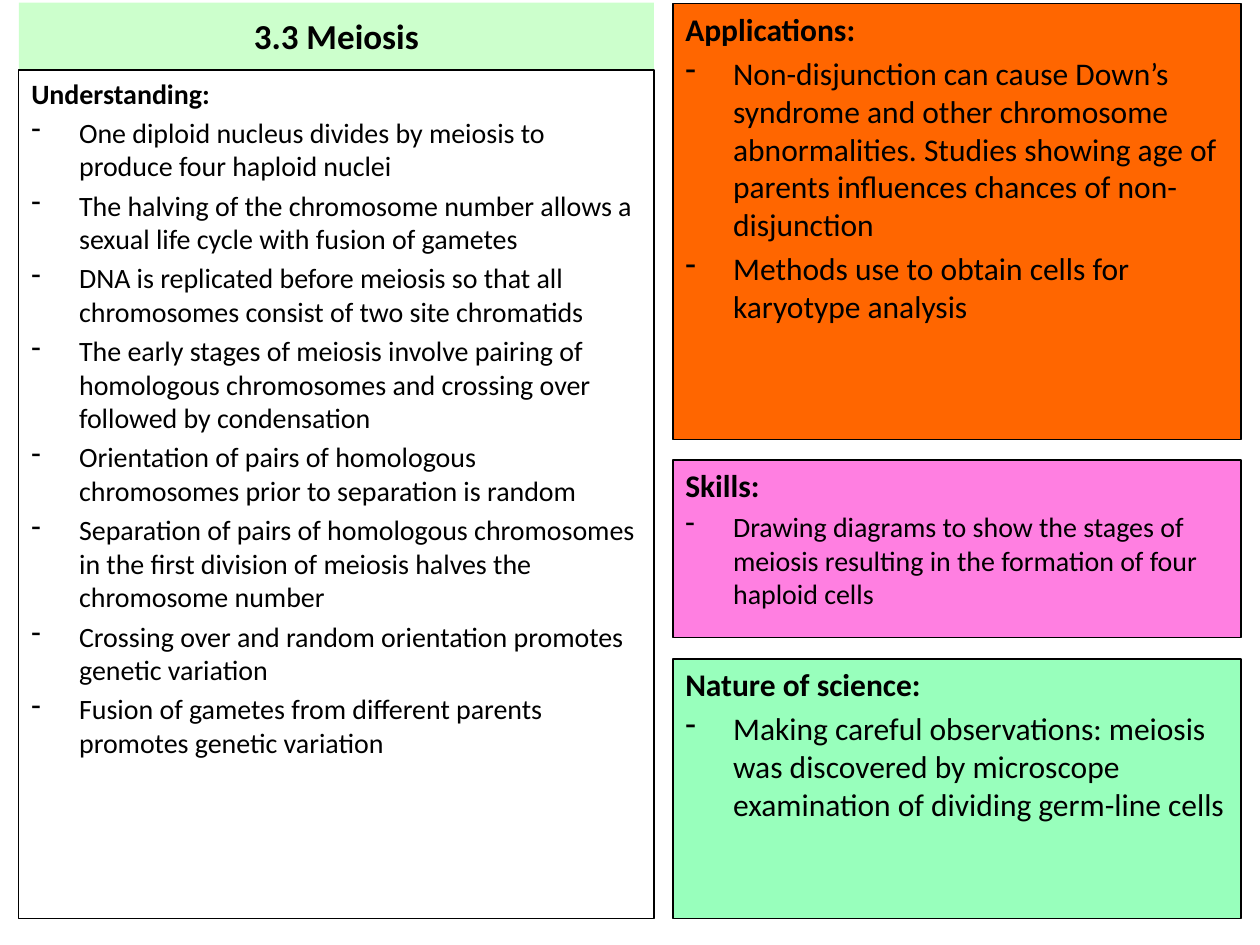
import pptx
import pptx.dml.color
import pptx.enum.shapes
import pptx.enum.text
import pptx.oxml
import pptx.util
from pptx.oxml.ns import qn

COLOURS = {
    "text": "000000",
    "line": "000000",
    "title": "CCFFCC",
    "applications": "FF6600",
    "skills": "FF7FE1",
    "nature": "98FFBC",
}

# Columns (left, width) in percent of the slide's width
LEFT_COLUMN = (1.5, 50.4)
RIGHT_COLUMN = (53.4, 45.1)

UNDERSTANDING = [
    "One diploid nucleus divides by meiosis to produce four haploid nuclei",
    "The halving of the chromosome number allows a sexual life cycle with fusion of gametes",
    "DNA is replicated before meiosis so that all chromosomes consist of two site chromatids",
    "The early stages of meiosis involve pairing of homologous chromosomes and crossing over "
    "followed by condensation",
    "Orientation of pairs of homologous chromosomes prior to separation is random",
    "Separation of pairs of homologous chromosomes in the first division of meiosis halves "
    "the chromosome number",
    "Crossing over and random orientation promotes genetic variation",
    "Fusion of gametes from different parents promotes genetic variation",
]
APPLICATIONS = [
    "Non-disjunction can cause Down’s syndrome and other chromosome abnormalities. "
    "Studies showing age of parents influences chances of non-disjunction",
    "Methods use to obtain cells for karyotype analysis",
]
SKILLS = [
    "Drawing diagrams to show the stages of meiosis resulting in the formation of four "
    "haploid cells",
]
NATURE = [
    "Making careful observations: meiosis was discovered by microscope examination of "
    "dividing germ-line cells",
]


class SlideBuilder:
    font = "Calibri"
    indent = pptx.util.Inches(0.38)
    space_share = 0.2

    def __init__(self, presentation):
        self.width = presentation.slide_width
        self.height = presentation.slide_height
        self.slide = presentation.slides.add_slide(presentation.slide_layouts[6])

    def colour(self, name):
        return pptx.dml.color.RGBColor.from_string(COLOURS[name])

    def box(self, column, rows, fill=None, outlined=True):
        """Add a rectangle; column and rows are (start, size) in percent of the slide."""
        shape = self.slide.shapes.add_shape(
            pptx.enum.shapes.MSO_SHAPE.RECTANGLE,
            *(int(share * length / 100) for share, length in (
                (column[0], self.width), (rows[0], self.height),
                (column[1], self.width), (rows[1], self.height))))
        shape.shadow.inherit = False
        if fill:
            shape.fill.solid()
            shape.fill.fore_color.rgb = self.colour(fill)
        else:
            shape.fill.background()
        if outlined:
            shape.line.color.rgb = self.colour("line")
            shape.line.width = pptx.util.Pt(0.75)
        else:
            shape.line.fill.background()
        shape.text_frame.word_wrap = True
        shape.text_frame.vertical_anchor = pptx.enum.text.MSO_ANCHOR.TOP
        return shape

    def set_text(self, paragraph, text, size, bold=False):
        paragraph.text = text
        paragraph.alignment = pptx.enum.text.PP_ALIGN.LEFT
        paragraph.font.name = self.font
        paragraph.font.size = pptx.util.Pt(size)
        paragraph.font.bold = bold
        paragraph.font.color.rgb = self.colour("text")

    def add_dash(self, paragraph):
        """Give the paragraph a hanging dash bullet."""
        properties = paragraph._p.get_or_add_pPr()
        properties.set("marL", str(self.indent))
        properties.set("indent", str(-self.indent))
        bullet = pptx.oxml.parse_xml(
            '<a:buChar xmlns:a="http://schemas.openxmlformats.org/drawingml/2006/main" char="-"/>')
        properties.find(qn("a:defRPr")).addprevious(bullet)

    def title(self, text, column, rows):
        shape = self.box(column, rows, "title", outlined=False)
        shape.text_frame.vertical_anchor = pptx.enum.text.MSO_ANCHOR.MIDDLE
        paragraph = shape.text_frame.paragraphs[0]
        self.set_text(paragraph, text, 20, bold=True)
        paragraph.alignment = pptx.enum.text.PP_ALIGN.CENTER

    def panel(self, heading, items, column, rows, fill=None, heading_size=18, item_size=18):
        frame = self.box(column, rows, fill).text_frame
        self.set_text(frame.paragraphs[0], heading, heading_size, bold=True)
        for item in items:
            paragraph = frame.add_paragraph()
            self.set_text(paragraph, item, item_size)
            paragraph.space_before = pptx.util.Pt(item_size * self.space_share)
            self.add_dash(paragraph)


def main():
    presentation = pptx.Presentation()
    presentation.slide_width = pptx.util.Inches(10)
    presentation.slide_height = pptx.util.Inches(7.5)

    builder = SlideBuilder(presentation)
    builder.title("3.3 Meiosis", LEFT_COLUMN, (0.27, 7.07))
    builder.panel("Understanding:", UNDERSTANDING, LEFT_COLUMN, (7.4, 89.8),
                  heading_size=16, item_size=16)
    builder.panel("Applications:", APPLICATIONS, RIGHT_COLUMN, (0.4, 46.13), "applications")
    builder.panel("Skills:", SKILLS, RIGHT_COLUMN, (48.67, 18.8), "skills", item_size=16)
    builder.panel("Nature of science:", NATURE, RIGHT_COLUMN, (69.73, 27.47), "nature")

    presentation.save("out.pptx")


if __name__ == "__main__":
    main()
